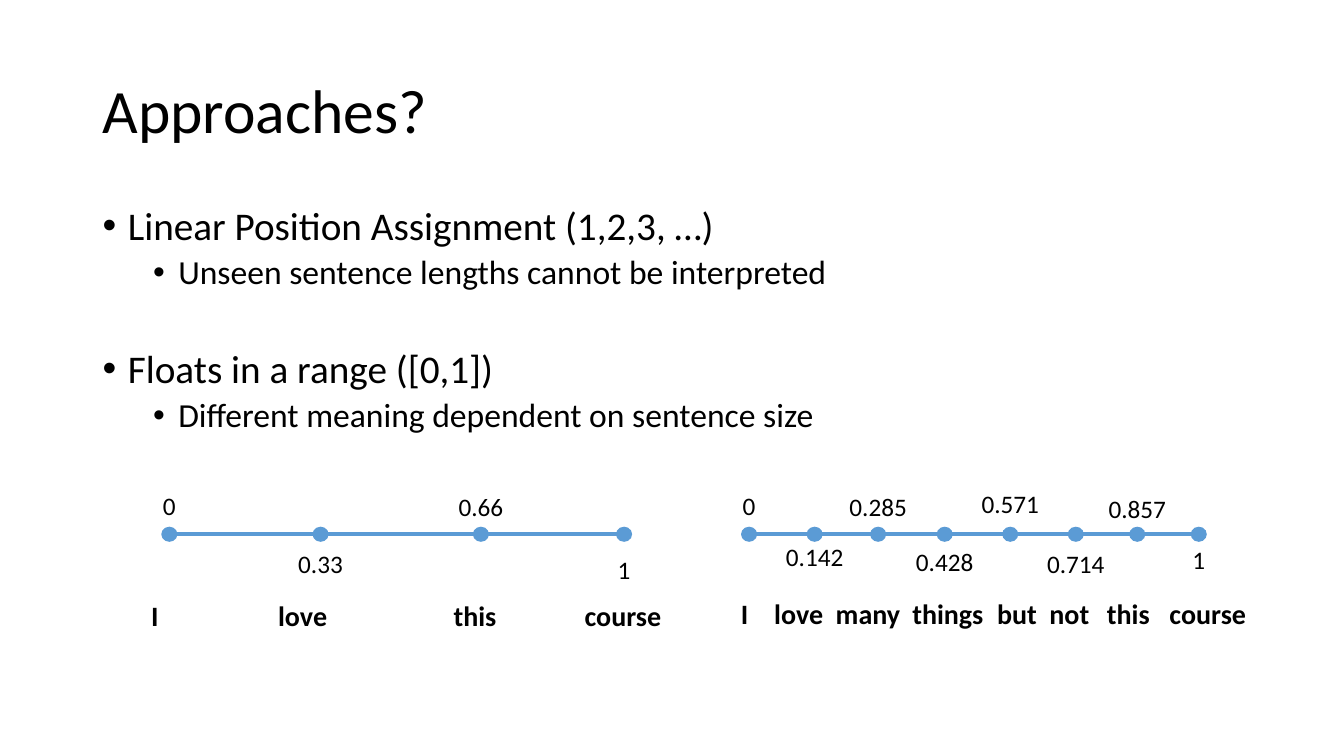
from dataclasses import dataclass

from lxml.etree import SubElement
from pptx import Presentation
from pptx.dml.color import RGBColor
from pptx.enum.shapes import MSO_CONNECTOR as Connector, MSO_SHAPE as Shape
from pptx.enum.text import MSO_ANCHOR as Anchor, PP_ALIGN as Align
from pptx.oxml.ns import qn
from pptx.util import Inches, Pt


@dataclass(frozen=True)
class Theme:
    font: str = "Calibri"
    ink: RGBColor = RGBColor(0, 0, 0)
    accent: RGBColor = RGBColor(0x5B, 0x9B, 0xD5)
    title: int = 44
    bullet: int = 28
    sub_bullet: int = 24
    words: int = 20
    label: int = 18
    line: int = 3


THEME = Theme()
LINE_SPACING = 0.9
DOT_WIDTH, DOT_HEIGHT = 0.16, 0.15
LABEL_WIDTH, LABEL_HEIGHT = 0.84, 0.4
AXIS_DROP = 0.5
TEXT_INSET = 0.1

# Text, level, space before in points
BULLETS = [
    ("Linear Position Assignment (1,2,3, …)", 0, 10),
    ("Unseen sentence lengths cannot be interpreted", 1, 5),
    ("Floats in a range ([0,1])", 0, 41),
    ("Different meaning dependent on sentence size", 1, 5),
]


@dataclass(frozen=True)
class Scale:
    """One number line; ticks are (label, centre, label top), words are (word, left)."""
    box: tuple
    axis: tuple
    ticks: list
    words_top: float
    words: list


SHORT_SENTENCE = Scale(
    box=(1.4, 4.8, 5.42, 1.53),
    axis=(0.36, 4.79),
    ticks=[("0", 0.28, 0.02), ("0.33", 1.78, 0.59),
           ("0.66", 3.37, 0.03), ("1", 4.79, 0.65)],
    words_top=1.09,
    words=[("I", 0), ("love", 1.26), ("this", 3), ("course", 4.3)],
)
LONG_SENTENCE = Scale(
    box=(7.25, 4.8, 5.42, 1.51),
    axis=(0.19, 4.62),
    ticks=[("0", 0.18, 0.02), ("0.142", 0.83, 0.52), ("0.285", 1.46, 0.03),
           ("0.428", 2.12, 0.57), ("0.571", 2.77, 0), ("0.714", 3.42, 0.59),
           ("0.857", 4.03, 0.04), ("1", 4.64, 0.55)],
    words_top=1.07,
    words=[("I", 0), ("love", 0.33), ("many", 0.94), ("things", 1.7), ("but", 2.54),
           ("not", 3.06), ("this", 3.63), ("course", 4.25)],
)


def add_text_frame(page, box):
    frame = page.shapes.add_textbox(*map(Inches, box)).text_frame
    frame.word_wrap = True
    return frame


def write(para, text, size, bold=False):
    para.text = text
    para.font.name = THEME.font
    para.font.size = Pt(size)
    para.font.bold = bold
    para.font.color.rgb = THEME.ink


def set_bullet(para, level):
    para.level = level
    properties = para._p.get_or_add_pPr()
    properties.set("marL", str(Inches(0.25 + 0.5 * level)))
    properties.set("indent", str(Inches(-0.25)))
    bullet_font = properties.makeelement(qn("a:buFont"), {"typeface": "Arial"})
    bullet = properties.makeelement(qn("a:buChar"), {"char": "•"})
    properties.insert_element_before(bullet_font, "a:tabLst", "a:defRPr")
    properties.insert_element_before(bullet, "a:tabLst", "a:defRPr")


def set_tab_stops(para, positions):
    properties = para._p.get_or_add_pPr()
    tabs = properties.makeelement(qn("a:tabLst"), {})
    for position in positions:
        SubElement(tabs, qn("a:tab"), pos=str(Inches(position)), algn="l")
    properties.insert_element_before(tabs, "a:defRPr")


def add_title(page, box):
    frame = add_text_frame(page, box)
    frame.vertical_anchor = Anchor.MIDDLE
    para = frame.paragraphs[0]
    write(para, "Approaches?", THEME.title)
    para.line_spacing = LINE_SPACING


def add_bullets(page, box):
    frame = add_text_frame(page, box)
    for index, (text, level, space) in enumerate(BULLETS):
        para = frame.add_paragraph() if index else frame.paragraphs[0]
        write(para, text, THEME.sub_bullet if level else THEME.bullet)
        para.line_spacing = LINE_SPACING
        para.space_before = Pt(space)
        set_bullet(para, level)


def add_axis(page, start, end, y):
    axis = page.shapes.add_connector(
        Connector.STRAIGHT, Inches(start), Inches(y), Inches(end), Inches(y))
    axis.line.color.rgb = THEME.accent
    axis.line.width = Pt(THEME.line)
    SubElement(axis._element.spPr, qn("a:effectLst"))


def add_dot(page, x, y):
    dot = page.shapes.add_shape(
        Shape.OVAL, Inches(x - DOT_WIDTH / 2), Inches(y - DOT_HEIGHT / 2),
        Inches(DOT_WIDTH), Inches(DOT_HEIGHT))
    dot.shadow.inherit = False
    dot.fill.solid()
    dot.fill.fore_color.rgb = THEME.accent
    dot.line.fill.background()


def add_scale(page, scale):
    left, top, width, height = scale.box
    axis_y = top + AXIS_DROP
    start, end = scale.axis
    add_axis(page, left + start, left + end, axis_y)
    for label, centre, label_top in scale.ticks:
        x = left + centre
        add_dot(page, x, axis_y)
        label_box = (x - LABEL_WIDTH / 2, top + label_top, LABEL_WIDTH, LABEL_HEIGHT)
        para = add_text_frame(page, label_box).paragraphs[0]
        write(para, label, THEME.label)
        para.alignment = Align.CENTER

    words_box = (left, top + scale.words_top, width, height - scale.words_top)
    para = add_text_frame(page, words_box).paragraphs[0]
    write(para, "\t".join(word for word, _ in scale.words), THEME.words, bold=True)
    set_tab_stops(para, [position for _, position in scale.words[1:]])


def main():
    deck = Presentation()
    deck.slide_width, deck.slide_height = Inches(13.33), Inches(7.5)
    page = deck.slides.add_slide(deck.slide_layouts[6])
    add_title(page, (0.92, 0.4, 11.5, 1.45))
    add_bullets(page, (0.92, 2, 11.5, 4.76))
    for scale in (SHORT_SENTENCE, LONG_SENTENCE):
        add_scale(page, scale)
    deck.save("out.pptx")


if __name__ == "__main__":
    main()
